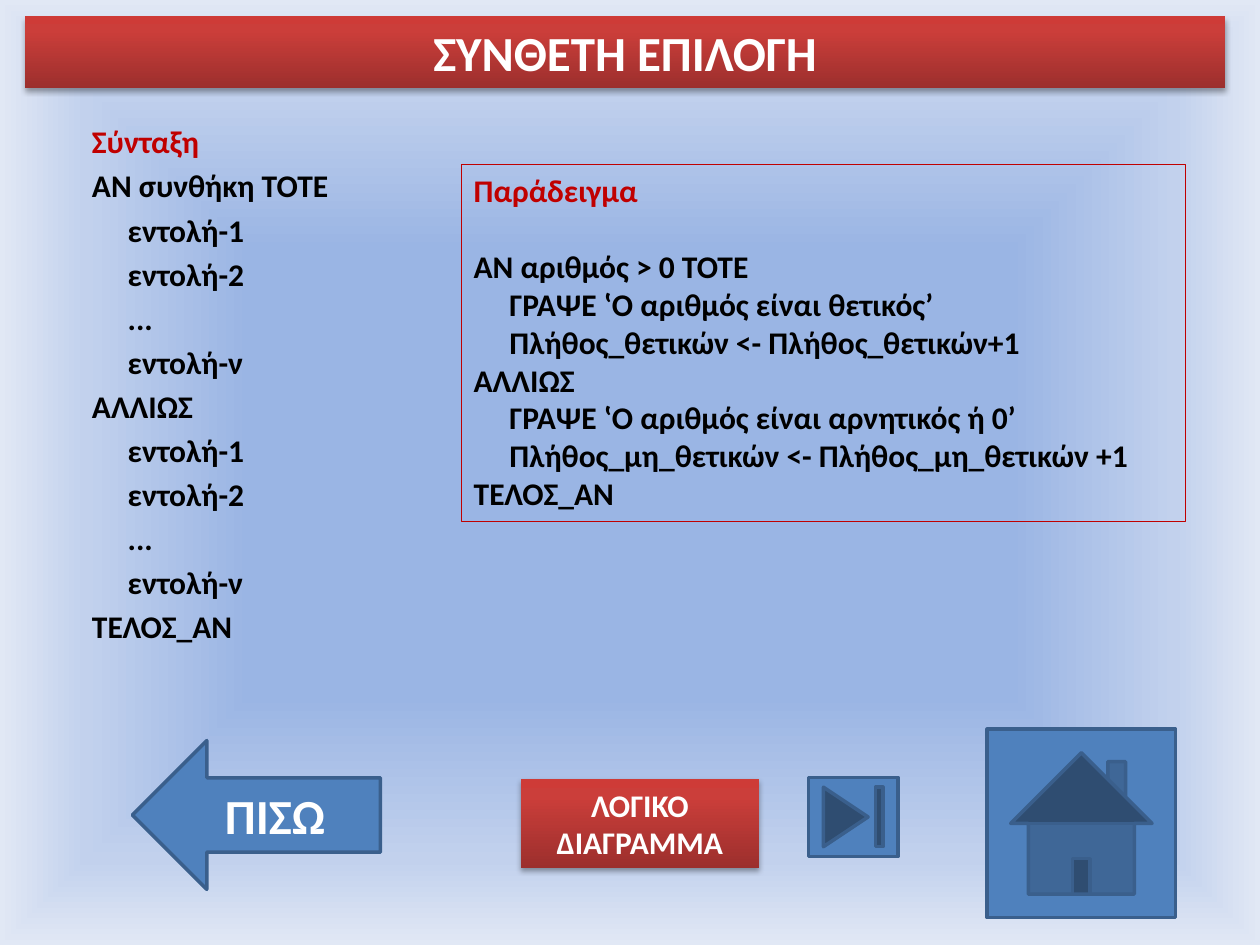
from lxml import etree
from pptx import Presentation
from pptx.dml.color import RGBColor
from pptx.enum.shapes import MSO_SHAPE as SHAPE
from pptx.enum.text import MSO_ANCHOR as ANCHOR, MSO_AUTO_SIZE as AUTO, PP_ALIGN as ALIGN
from pptx.oxml.ns import qn
from pptx.util import Cm, Pt

RED = RGBColor(0xC0, 0x00, 0x00)
BLACK = RGBColor(0x00, 0x00, 0x00)
WHITE = RGBColor(0xFF, 0xFF, 0xFF)
BLUE = RGBColor(0x4F, 0x81, 0xBD)
DARK_BLUE = RGBColor(0x3A, 0x5F, 0x8C)
BACKGROUND_STOPS = [(47, RGBColor(0x9A, 0xB5, 0xE4)),
                    (82, RGBColor(0xC2, 0xD1, 0xED)),
                    (100, RGBColor(0xE1, 0xE8, 0xF5))]
BAND_STOPS = [(0, RGBColor(0x9C, 0x2F, 0x2D)),
              (80, RGBColor(0xCB, 0x3E, 0x3A)),
              (100, RGBColor(0xCE, 0x3B, 0x37))]
FONT = "Calibri"
INDENT = Cm(0.72)

# Each line is (indent level, text).
COMMANDS = [(1, "εντολή-1"), (1, "εντολή-2"), (1, "..."), (1, "εντολή-ν")]
SYNTAX = [(0, "Σύνταξη"), (0, "ΑΝ συνθήκη ΤΟΤΕ"), *COMMANDS,
          (0, "ΑΛΛΙΩΣ"), *COMMANDS, (0, "ΤΕΛΟΣ_ΑΝ")]
EXAMPLE = [(0, "Παράδειγμα"),
           (0, "ΑΝ αριθμός > 0 ΤΟΤΕ"),
           (1, "ΓΡΑΨΕ ʽΟ αριθμός είναι θετικόςʼ"),
           (1, "Πλήθος_θετικών <- Πλήθος_θετικών+1"),
           (0, "ΑΛΛΙΩΣ"),
           (1, "ΓΡΑΨΕ ʽΟ αριθμός είναι αρνητικός ή 0ʼ"),
           (1, "Πλήθος_μη_θετικών <- Πλήθος_μη_θετικών +1"),
           (0, "ΤΕΛΟΣ_ΑΝ")]


def place(sp, left, top, width, height):
    """Move and size a shape, in centimetres."""
    sp.left, sp.top, sp.width, sp.height = map(Cm, (left, top, width, height))


def set_gradient(fill, parent, stops, radial=False):
    """Fill a shape or background with a gradient of (percent, colour) stops."""
    fill.solid()
    solid = parent.find(qn("a:solidFill"))
    grad = etree.Element(qn("a:gradFill"), rotWithShape="1")
    gs_list = etree.SubElement(grad, qn("a:gsLst"))
    for percent, color in stops:
        gs = etree.SubElement(gs_list, qn("a:gs"), pos=str(percent * 1000))
        etree.SubElement(gs, qn("a:srgbClr"), val=str(color))
    if radial:
        shade = etree.SubElement(grad, qn("a:path"), path="shape")
        etree.SubElement(shade, qn("a:fillToRect"),
                         l="50000", t="50000", r="50000", b="50000")
    else:
        etree.SubElement(grad, qn("a:lin"), ang=str(270 * 60000), scaled="0")
    parent.replace(solid, grad)


def add_shadow(sp):
    """Give a shape a soft shadow straight below it."""
    sp.shadow.inherit = False
    effects = sp._element.spPr.find(qn("a:effectLst"))
    outer = etree.SubElement(effects, qn("a:outerShdw"), blurRad=str(Pt(3.1)),
                             dist=str(Pt(1.8)), dir=str(90 * 60000), rotWithShape="0")
    color = etree.SubElement(outer, qn("a:srgbClr"), val=str(BLACK))
    etree.SubElement(color, qn("a:alpha"), val="35000")


def format_runs(p, size, color):
    """Apply the slide's bold font to the runs of a paragraph."""
    for r in p.runs:
        r.font.name, r.font.size, r.font.bold = FONT, Pt(size), True
        r.font.color.rgb = color


def set_label(sp, text, size):
    """Write a centred white label in a shape."""
    tf = sp.text_frame
    tf.text = text
    tf.word_wrap = True
    tf.auto_size = AUTO.NONE
    tf.vertical_anchor = ANCHOR.MIDDLE
    p = tf.paragraphs[0]
    p.alignment = ALIGN.CENTER
    format_runs(p, size, WHITE)


def set_code(sp, lines, space_before=0):
    """Write indented pseudocode below a red heading."""
    tf = sp.text_frame
    tf.text = "\n".join(text for _, text in lines)
    tf.word_wrap = True
    tf.auto_size = AUTO.NONE
    tf.vertical_anchor = ANCHOR.TOP
    for i, (p, (level, _)) in enumerate(zip(tf.paragraphs, lines)):
        p.alignment = ALIGN.LEFT
        p.space_before = Pt(space_before)
        pPr = p._p.get_or_add_pPr()
        pPr.set("marL", str(level * INDENT))
        pPr.set("indent", "0")
        etree.SubElement(pPr, qn("a:buNone"))
        format_runs(p, 18, BLACK if i else RED)


def style_band(sp, text, size):
    """Turn a shape into a red gradient band with a label."""
    set_gradient(sp.fill, sp._element.spPr, BAND_STOPS)
    sp.line.fill.background()
    add_shadow(sp)
    set_label(sp, text, size)


def add_box(slide, kind, *box):
    """Add a preset shape without a shadow."""
    sp = slide.shapes.add_shape(kind, *map(Cm, box))
    sp.shadow.inherit = False
    return sp


def add_button(slide, kind, *box):
    """Add a blue navigation button."""
    sp = add_box(slide, kind, *box)
    sp.fill.solid()
    sp.fill.fore_color.rgb = BLUE
    sp.line.color.rgb = DARK_BLUE
    sp.line.width = Pt(2)
    return sp


def main():
    """Build the slide and save it."""
    prs = Presentation()
    prs.slide_width, prs.slide_height = Cm(25.4), Cm(19.05)
    slide = prs.slides.add_slide(prs.slide_layouts[1])
    background = slide.background.fill
    background.solid()
    bgPr = slide._element.find(".//" + qn("p:bgPr"))
    set_gradient(background, bgPr, BACKGROUND_STOPS, radial=True)

    title, syntax = slide.placeholders
    place(title, 0.5, 0.33, 24.2, 1.45)
    style_band(title, "ΣΥΝΘΕΤΗ ΕΠΙΛΟΓΗ", 28)
    place(syntax, 1.6, 2.34, 6.83, 11.45)
    set_code(syntax, SYNTAX, space_before=3.6)

    example = add_box(slide, SHAPE.RECTANGLE, 9.3, 3.32, 14.6, 7.19)
    example.fill.background()
    example.line.color.rgb = RED
    example.line.width = Pt(0.75)
    set_code(example, EXAMPLE)
    example.text_frame.paragraphs[1].space_before = Pt(22)

    diagram = add_box(slide, SHAPE.RECTANGLE, 10.5, 15.7, 4.8, 1.8)
    style_band(diagram, "ΛΟΓΙΚΟ ΔΙΑΓΡΑΜΜΑ", 18)

    back = add_button(slide, SHAPE.LEFT_ARROW, 2.67, 14.93, 5, 3)
    set_label(back, "ΠΙΣΩ", 28)
    add_button(slide, SHAPE.ACTION_BUTTON_END, 16.3, 15.67, 1.8, 1.6)
    add_button(slide, SHAPE.ACTION_BUTTON_HOME, 19.9, 14.7, 3.8, 3.8)

    prs.save("out.pptx")


if __name__ == "__main__":
    main()
